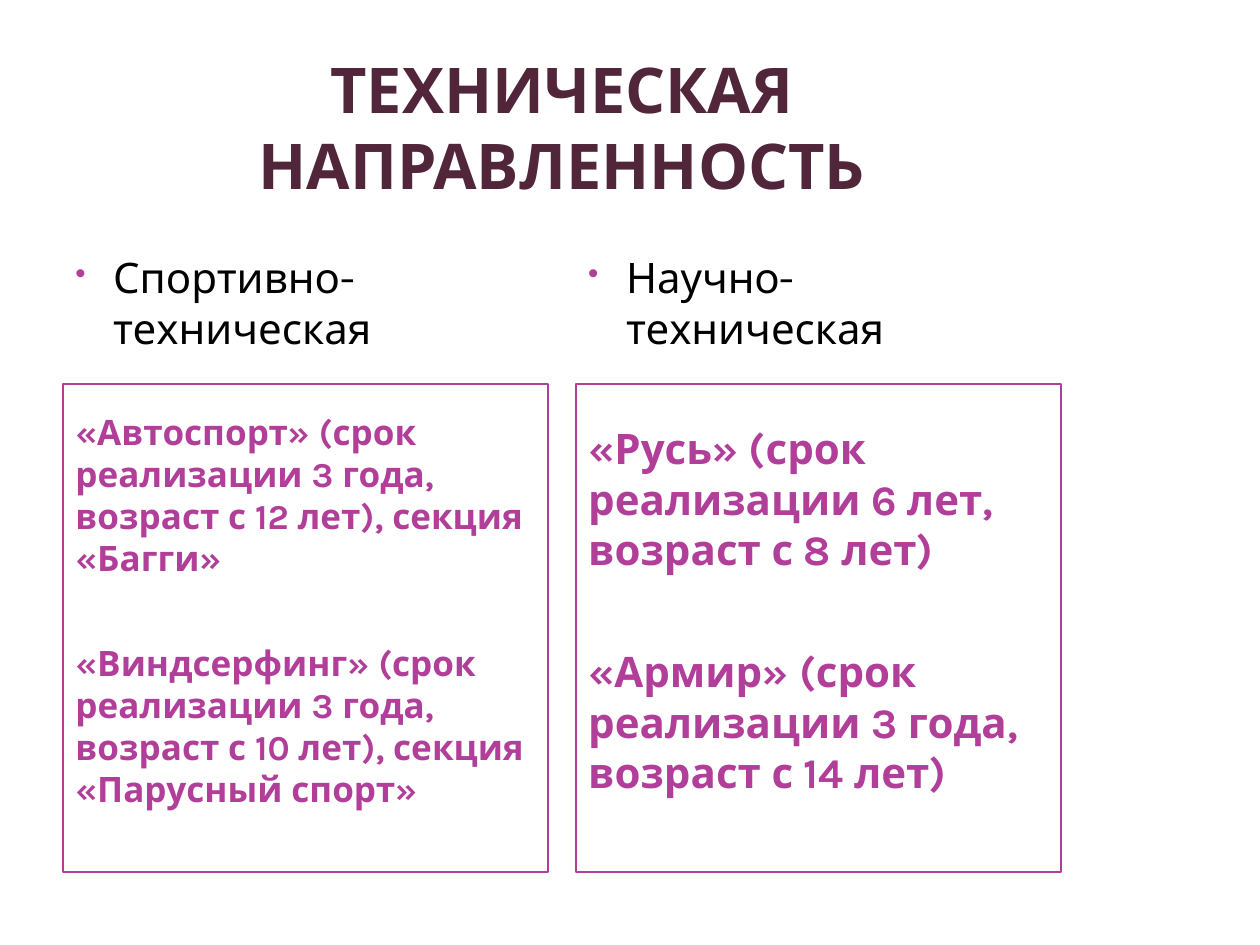
from dataclasses import dataclass

from lxml.etree import SubElement
from pptx import Presentation
from pptx.dml.color import RGBColor
from pptx.enum.shapes import MSO_SHAPE
from pptx.enum.text import MSO_ANCHOR, PP_ALIGN
from pptx.oxml.ns import qn
from pptx.slide import Slide
from pptx.text.text import TextFrame, _Paragraph
from pptx.util import Inches, Pt

PLUM = RGBColor(0x51, 0x25, 0x3A)
MAGENTA = RGBColor(0xB1, 0x3F, 0x9A)
BLACK = RGBColor(0, 0, 0)
FONT = "Karla"
COLUMN_WIDTH = 3.85


@dataclass(frozen=True)
class Column:
    left: float
    heading: str
    heading_width: float
    programs: tuple[str, ...]
    size: int
    gap: int


COLUMNS = (
    Column(
        0.5,
        "Спортивно-техническая",
        4.19,
        (
            "«Автоспорт» (срок реализации 3 года, возраст с 12 лет), секция «Багги»",
            "«Виндсерфинг» (срок реализации 3 года, возраст с 10 лет), секция «Парусный спорт»",
        ),
        20,
        36,
    ),
    Column(
        4.57,
        "Научно-техническая",
        COLUMN_WIDTH,
        (
            "«Русь» (срок реализации 6 лет, возраст с 8 лет)",
            "«Армир» (срок реализации 3 года, возраст с 14 лет)",
        ),
        24,
        41,
    ),
)


def style(para: _Paragraph, size: int, color: RGBColor, bold: bool) -> None:
    para.font.name = FONT
    para.font.size = Pt(size)
    para.font.bold = bold
    para.font.color.rgb = color


def add_bullet(para: _Paragraph) -> None:
    properties = para._p.get_or_add_pPr()
    properties.set("marL", str(Inches(0.3)))
    properties.set("indent", str(Inches(-0.3)))
    color = SubElement(properties, qn("a:buClr"))
    SubElement(color, qn("a:srgbClr"), val=str(MAGENTA))
    SubElement(properties, qn("a:buSzPct"), val="73000")
    SubElement(properties, qn("a:buChar"), char="•")


def add_text_frame(page: Slide, left: float, top: float, width: float, height: float) -> TextFrame:
    box = page.shapes.add_textbox(Inches(left), Inches(top), Inches(width), Inches(height))
    box.text_frame.word_wrap = True
    return box.text_frame


def add_title(page: Slide, text: str) -> None:
    frame = add_text_frame(page, 0.5, 0.35, 7.92, 1.25)
    frame.vertical_anchor = MSO_ANCHOR.BOTTOM
    frame.margin_left = frame.margin_right = Inches(0.05)
    frame.margin_top = frame.margin_bottom = Inches(0)
    para = frame.paragraphs[0]
    para.text = text
    para.alignment = PP_ALIGN.CENTER
    style(para, 36, PLUM, True)


def add_heading(page: Slide, column: Column) -> None:
    frame = add_text_frame(page, column.left, 1.87, column.heading_width, 1.1)
    frame.margin_top = Inches(0.13)
    para = frame.paragraphs[0]
    para.text = column.heading
    add_bullet(para)
    style(para, 24, BLACK, False)


def add_programs(page: Slide, column: Column) -> None:
    box = page.shapes.add_shape(
        MSO_SHAPE.RECTANGLE, Inches(column.left), Inches(3.05), Inches(COLUMN_WIDTH), Inches(3.87)
    )
    box.shadow.inherit = False
    box.fill.background()
    box.line.color.rgb = MAGENTA
    box.line.width = Pt(1)
    frame = box.text_frame
    frame.word_wrap = True
    frame.vertical_anchor = MSO_ANCHOR.MIDDLE
    frame.margin_bottom = Inches(0.34)
    for index, program in enumerate(column.programs):
        para = frame.add_paragraph() if index else frame.paragraphs[0]
        para.text = program
        para.alignment = PP_ALIGN.LEFT
        if index:
            para.space_before = Pt(column.gap)
        style(para, column.size, MAGENTA, True)


def main() -> None:
    deck = Presentation()
    deck.slide_width = Inches(10)
    deck.slide_height = Inches(7.5)
    page = deck.slides.add_slide(deck.slide_layouts[6])
    add_title(page, "ТЕХНИЧЕСКАЯ НАПРАВЛЕННОСТЬ")
    for column in COLUMNS:
        add_programs(page, column)
        add_heading(page, column)
    deck.save("out.pptx")


if __name__ == "__main__":
    main()
